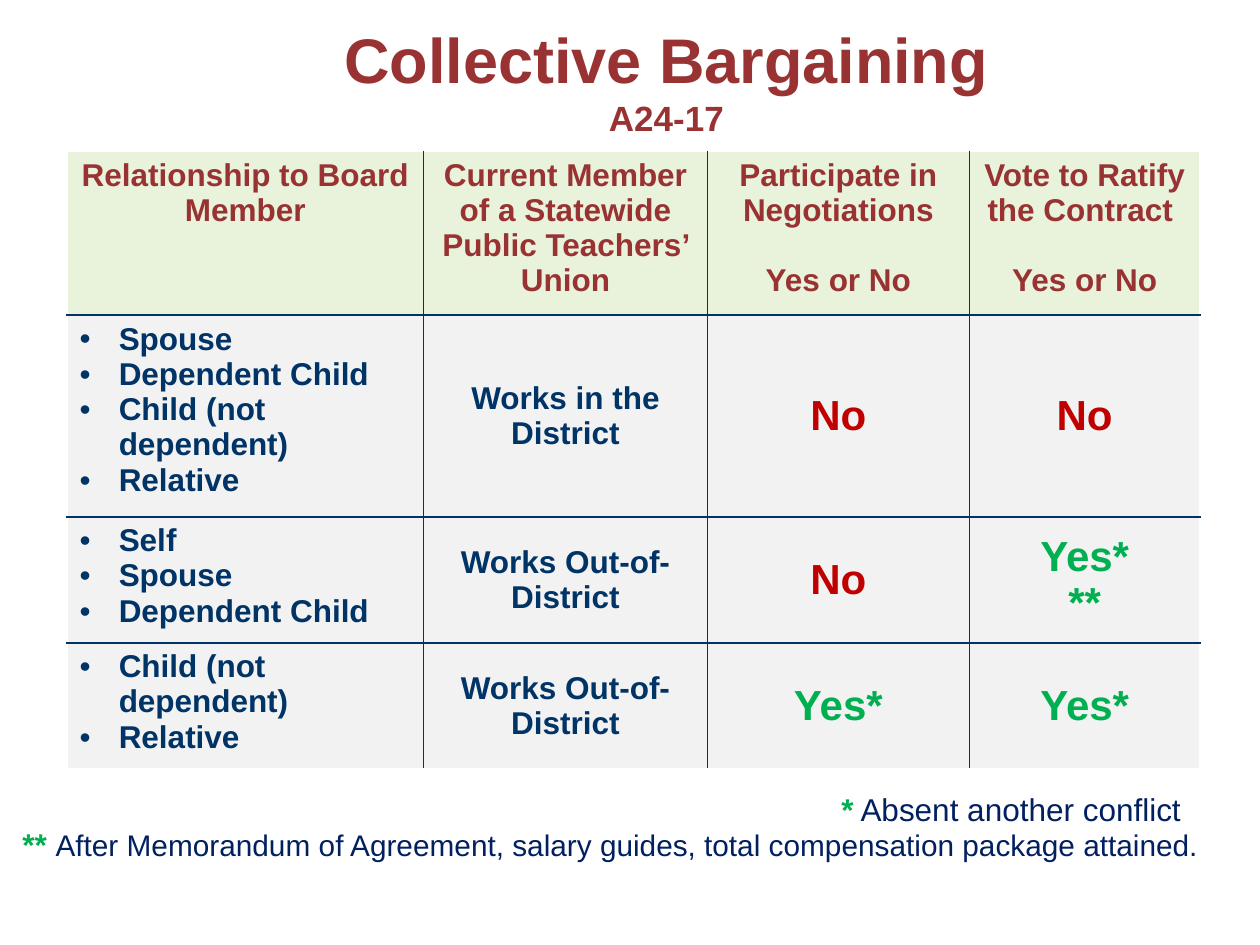
from dataclasses import dataclass

from lxml.etree import SubElement
from pptx import Presentation
from pptx.dml.color import RGBColor
from pptx.enum.text import MSO_ANCHOR, PP_ALIGN
from pptx.oxml.ns import qn
from pptx.util import Cm, Pt


@dataclass(frozen=True)
class Theme:
    font: str = "Arial"
    brick: str = "993333"
    navy: str = "003366"
    ink: str = "002060"
    red: str = "C00000"
    green: str = "00B050"
    white: str = "FFFFFF"
    head: str = "E9F2DA"
    body: str = "F2F2F2"
    title: int = 36
    sub: int = 20
    text: int = 18
    note: int = 17
    vote: int = 24


THEME = Theme()
COLS = (7.19, 5.72, 5.28, 4.65)
ROWS = (3.3, 3.5, 2.54, 1.78)

# Header cells: lines, then an optional line set apart below
HEADS = (
    (["Relationship to Board Member"], None),
    (["Current Member of a Statewide", "Public Teachers’ Union"], None),
    (["Participate in Negotiations"], "Yes or No"),
    (["Vote to Ratify the Contract "], "Yes or No"),
)

# Body rows: relations, workplace, negotiate, ratify
CASES = (
    (["Spouse", "Dependent Child", "Child (not dependent)", "Relative"],
     "Works in the District", ["No"], ["No"]),
    (["Self", "Spouse", "Dependent Child"],
     "Works Out-of-District", ["No"], ["Yes*", "**"]),
    (["Child (not dependent)", "Relative"],
     "Works Out-of-District", ["Yes*"], ["Yes*"]),
)


def add_text(para, text, size=THEME.text, color=THEME.navy, bold=True,
             align=None, before=None, bullet=False):
    """Add a run to a paragraph and format both."""
    if bullet:
        props = para._p.get_or_add_pPr()
        props.set("marL", str(Cm(0.79)))
        props.set("indent", str(-Cm(0.79)))
        SubElement(props, qn("a:buFont"), typeface=THEME.font)
        SubElement(props, qn("a:buChar"), char="•")
    if align is not None:
        para.alignment = align
    if before is not None:
        para.space_before = Pt(before)
    run = para.add_run()
    run.text = text
    font = run.font
    font.name, font.size, font.bold = THEME.font, Pt(size), bold
    font.color.rgb = RGBColor.from_string(color)


def add_lines(frame, lines, **style):
    for i, line in enumerate(lines):
        para = frame.add_paragraph() if i else frame.paragraphs[0]
        add_text(para, line, **style)


def add_box(slide, left, top, width, height, wrap=True):
    box = slide.shapes.add_textbox(Cm(left), Cm(top), Cm(width), Cm(height))
    box.text_frame.word_wrap = wrap
    return box.text_frame


def add_note(slide, place, mark, text, size, wrap=True):
    para = add_box(slide, *place, wrap=wrap).paragraphs[0]
    add_text(para, mark, color=THEME.green)
    add_text(para, text, size=size, color=THEME.ink, bold=False)


def set_edges(cell, row, col):
    """White lines on the outside of the table, navy ones within."""
    outer = {"L": col == 0, "R": col == len(COLS) - 1,
             "T": row == 0, "B": row == len(ROWS) - 1}
    props = cell._tc.get_or_add_tcPr()
    for side, out in outer.items():
        line = SubElement(props, qn(f"a:ln{side}"), w=str(Pt(1)))
        fill = SubElement(line, qn("a:solidFill"))
        SubElement(fill, qn("a:srgbClr"), val=THEME.white if out else THEME.navy)


def add_grid(slide):
    grid = slide.shapes.add_table(len(ROWS), len(COLS), Cm(1.35), Cm(3.05),
                                  Cm(sum(COLS)), Cm(sum(ROWS))).table
    for part, width in zip(grid.columns, COLS):
        part.width = Cm(width)
    for part, height in zip(grid.rows, ROWS):
        part.height = Cm(height)

    # Edges and fills
    for r in range(len(ROWS)):
        for c in range(len(COLS)):
            cell = grid.cell(r, c)
            set_edges(cell, r, c)
            cell.fill.solid()
            cell.fill.fore_color.rgb = RGBColor.from_string(
                THEME.body if r else THEME.head)
            if r and c:
                cell.vertical_anchor = MSO_ANCHOR.MIDDLE

    # Header row
    mid = PP_ALIGN.CENTER
    for c, (lines, last) in enumerate(HEADS):
        frame = grid.cell(0, c).text_frame
        add_lines(frame, lines, color=THEME.brick, align=mid)
        if last:
            add_text(frame.add_paragraph(), last, color=THEME.brick,
                     align=mid, before=20)

    # Body rows
    for r, (kin, work, *votes) in enumerate(CASES, 1):
        add_lines(grid.cell(r, 0).text_frame, kin, bullet=True)
        add_lines(grid.cell(r, 1).text_frame, [work], align=mid)
        for c, vote in enumerate(votes, 2):
            color = THEME.red if vote[0] == "No" else THEME.green
            add_lines(grid.cell(r, c).text_frame, vote, size=THEME.vote,
                      color=color, align=mid)


def main():
    deck = Presentation()
    deck.slide_width, deck.slide_height = Cm(25.4), Cm(19.05)
    slide = deck.slides.add_slide(deck.slide_layouts[6])

    # Title
    frame = add_box(slide, 2.74, 0.43, 21.39, 2.34)
    frame.vertical_anchor = MSO_ANCHOR.MIDDLE
    style = dict(color=THEME.brick, align=PP_ALIGN.CENTER)
    add_lines(frame, ["Collective Bargaining"], size=THEME.title, **style)
    add_text(frame.add_paragraph(), "A24-17", size=THEME.sub, **style)

    add_grid(slide)

    # Footnotes
    add_note(slide, (16.71, 15.8, 7.42, 1.02), "*", " Absent another conflict",
             THEME.text, wrap=False)
    add_note(slide, (0.2, 16.51, 24.56, 1.02), "** ",
             "After Memorandum of Agreement, salary guides, "
             "total compensation package attained.", THEME.note)

    deck.save("out.pptx")


if __name__ == "__main__":
    main()
